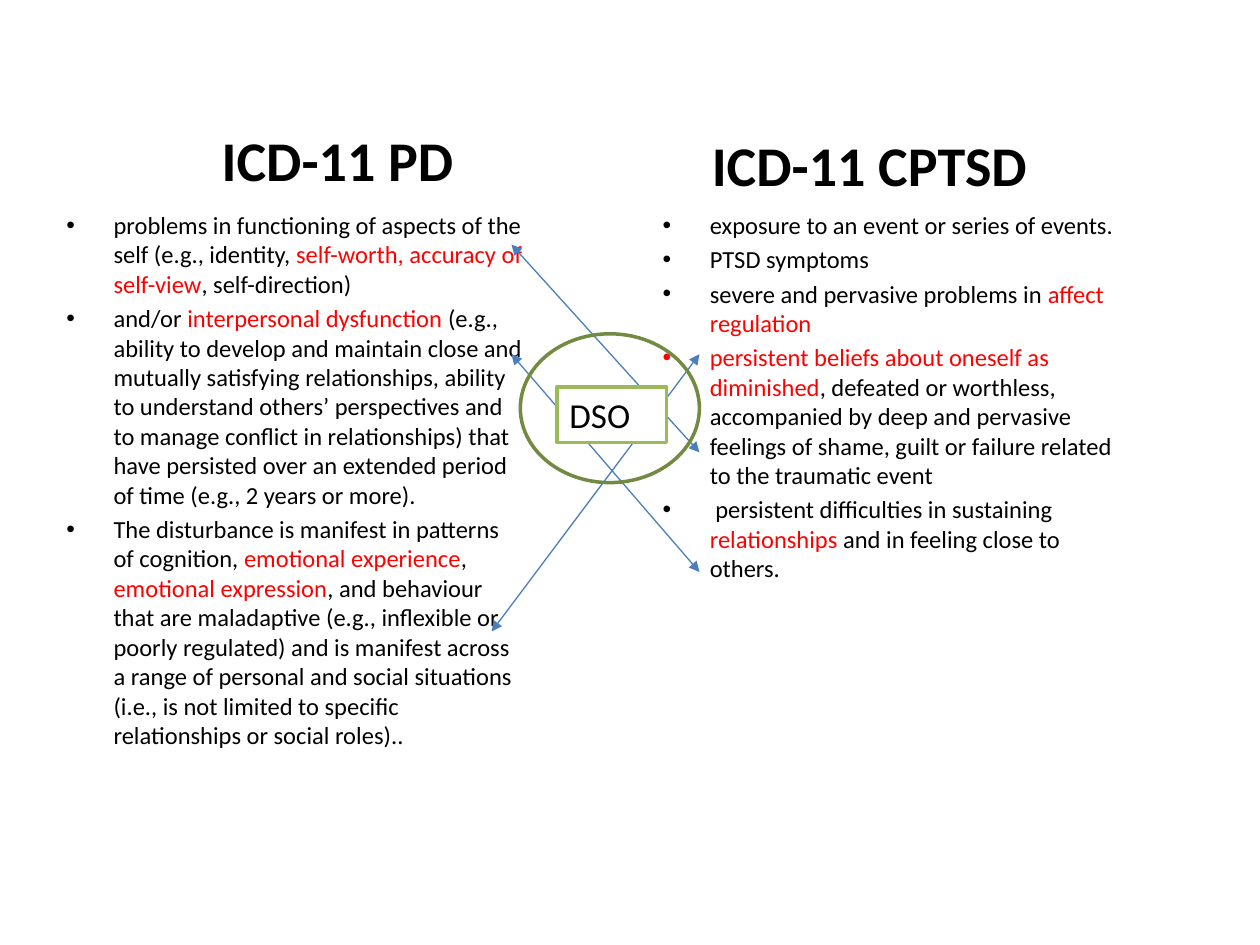
from lxml.etree import SubElement
from pptx import Presentation
from pptx.dml.color import RGBColor
from pptx.enum.shapes import MSO_CONNECTOR as Connector, MSO_SHAPE as Shape
from pptx.enum.text import PP_ALIGN as Align, MSO_ANCHOR as Anchor
from pptx.oxml.ns import qn
from pptx.util import Cm, Pt

COLORS = {
    "text": "000000",
    "accent": "FF0000",
    "arrow": "4B7EBC",
    "ellipse": "738A42",
    "border": "9BBB59",
    "white": "FFFFFF",
}
FONT = "Calibri"
INDENT = Cm(0.95)

# Asterisks enclose the words shown in the accent colour
PD_CRITERIA = [
    "problems in functioning of aspects of the self (e.g., identity, "
    "*self-worth, accuracy of self-view*, self-direction)",
    "and/or *interpersonal dysfunction *(e.g., ability to develop and maintain "
    "close and mutually satisfying relationships, ability to understand others’ "
    "perspectives and to manage conflict in relationships) that have persisted "
    "over an extended period of time (e.g., 2 years or more).",
    "The disturbance is manifest in patterns of cognition, *emotional experience*, "
    "*emotional expression*, and behaviour that are maladaptive (e.g., inflexible "
    "or poorly regulated) and is manifest across a range of personal and social "
    "situations (i.e., is not limited to specific relationships or social roles)..",
]
CPTSD_CRITERIA = [
    "exposure to an event or series of events.",
    "PTSD symptoms",
    "severe and pervasive problems in *affect regulation*",
    "*persistent beliefs about oneself as diminished*, defeated or worthless, "
    "accompanied by deep and pervasive feelings of shame, guilt or failure "
    "related to the traumatic event",
    " persistent difficulties in sustaining *relationships* and in feeling close "
    "to others.",
]


def color(name):
    return RGBColor.from_string(COLORS[name])


def centimetres(values):
    return [Cm(value) for value in values]


def add_bullet(para):
    properties = para._p.get_or_add_pPr()
    properties.set("marL", str(INDENT))
    properties.set("indent", str(-INDENT))
    SubElement(properties, qn("a:buFont"), typeface="Arial")
    SubElement(properties, qn("a:buChar"), char="•")


def write_text(box, lines, size=14, bold=False, bullets=False):
    frame = box.text_frame
    frame.word_wrap = True
    frame.vertical_anchor = Anchor.TOP
    for index, line in enumerate(lines):
        para = frame.add_paragraph() if index else frame.paragraphs[0]
        para.alignment = Align.LEFT
        if index:
            para.space_before = Pt(size * 0.2)
        if bullets:
            add_bullet(para)
        for part, words in enumerate(line.split("*")):
            if not words:
                continue
            span = para.add_run()
            span.text = words
            span.font.name = FONT
            span.font.size = Pt(size)
            span.font.bold = bold
            span.font.color.rgb = color("accent" if part % 2 else "text")


def add_text(page, place, lines, **style):
    write_text(page.shapes.add_textbox(*centimetres(place)), lines, **style)


def add_outline(page, kind, place, line, fill=None):
    shape = page.shapes.add_shape(kind, *centimetres(place))
    shape.shadow.inherit = False
    shape.line.color.rgb = color(line)
    shape.line.width = Pt(2)
    if fill:
        shape.fill.solid()
        shape.fill.fore_color.rgb = color(fill)
    else:
        shape.fill.background()
    return shape


def add_double_arrow(page, ends):
    arrow = page.shapes.add_connector(Connector.STRAIGHT, *centimetres(ends))
    arrow.line.color.rgb = color("arrow")
    arrow.line.width = Pt(0.75)
    line = arrow.line._get_or_add_ln()
    for end in ("a:headEnd", "a:tailEnd"):
        SubElement(line, qn(end), type="triangle")
    SubElement(arrow._element.spPr, qn("a:effectLst"))


def main():
    deck = Presentation()
    deck.slide_width, deck.slide_height = Cm(25.4), Cm(19.05)
    page = deck.slides.add_slide(deck.slide_layouts[6])

    # Criteria columns
    add_text(page, (1.09, 4.11, 9.75, 14.2), PD_CRITERIA, bullets=True)
    add_text(page, (13.11, 4.11, 9.73, 13.41), CPTSD_CRITERIA, bullets=True)

    # Links between matching criteria
    for ends in (
        (10.31, 4.93, 14.1, 9.12),
        (10.31, 7.14, 14.1, 11.53),
        (9.91, 12.73, 14.1, 7.14),
    ):
        add_double_arrow(page, ends)
    add_outline(page, Shape.OVAL, (10.49, 6.73, 3.61, 3), "ellipse")

    # Column headings
    add_text(page, (14.1, 2.51, 8, 1.24), ["ICD-11 CPTSD"], size=32, bold=True)
    add_text(page, (4.22, 2.41, 5.99, 1.24), ["ICD-11 PD"], size=32, bold=True)

    # Shared domain label
    label = add_outline(page, Shape.RECTANGLE, (11.23, 7.8, 2.21, 1.12),
                        "border", fill="white")
    write_text(label, ["DSO"], size=20)

    deck.save("out.pptx")


if __name__ == "__main__":
    main()
